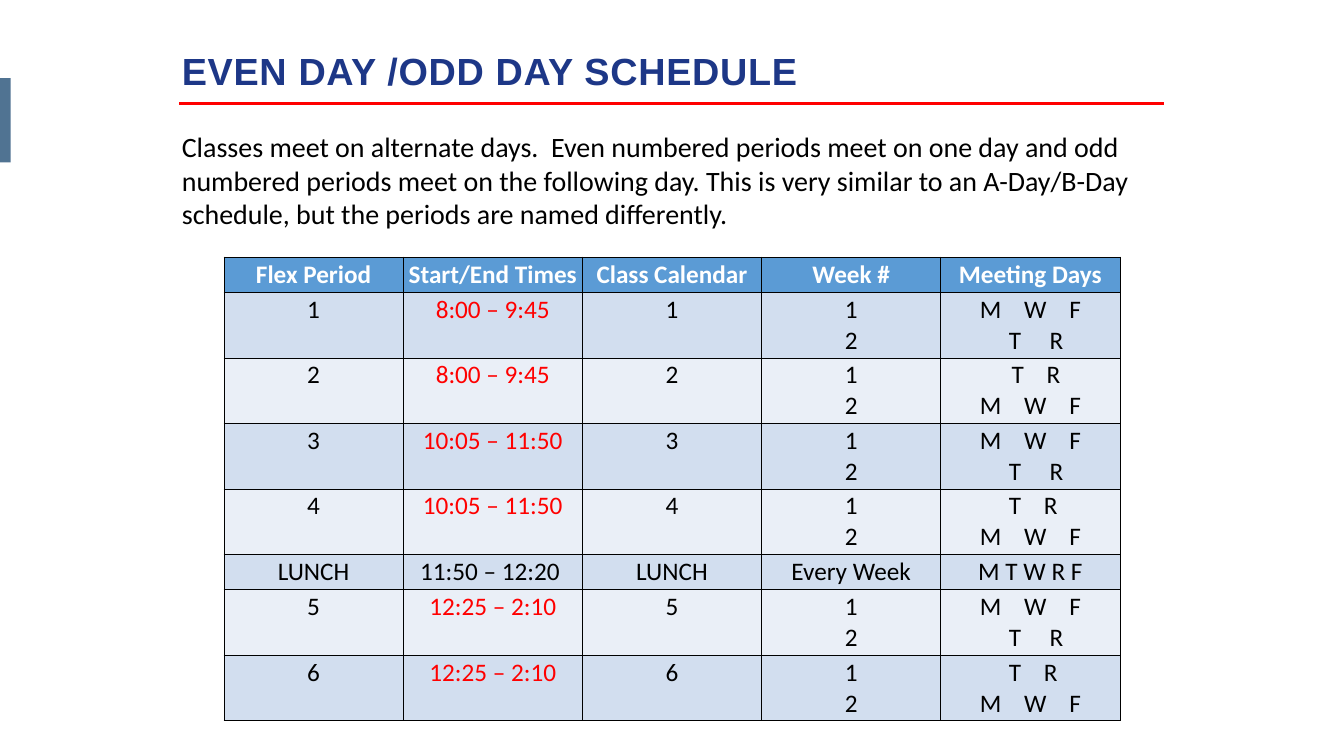
from lxml import etree
from pptx import Presentation
from pptx.dml.color import RGBColor
from pptx.enum.shapes import MSO_CONNECTOR, MSO_SHAPE
from pptx.enum.text import PP_ALIGN
from pptx.oxml.ns import qn
from pptx.util import Inches, Pt

STRAIGHT, RECTANGLE = MSO_CONNECTOR.STRAIGHT, MSO_SHAPE.RECTANGLE
CENTER, LEFT = PP_ALIGN.CENTER, PP_ALIGN.LEFT

COLORS = {
    "title": "1D3787", "rule": "FF0000", "tab": "507392", "text": "000000",
    "times": "FF0000", "header": "5B9BD5", "header_text": "FFFFFF",
    "odd_row": "D2DEEF", "even_row": "EAEFF7", "border": "000000",
}

TITLE = "EVEN DAY /ODD DAY SCHEDULE"
INTRO = (
    "Classes meet on alternate days.  Even numbered periods meet on one day "
    "and odd numbered periods meet on the following day. This is very similar "
    "to an A-Day/B-Day schedule, but the periods are named differently."
)
HEADERS = ["Flex Period", "Start/End Times", "Class Calendar", "Week #", "Meeting Days"]
WEEKS = "1\n2"
THREE_DAYS = "M    W    F"
ODD_DAYS = THREE_DAYS + "\n  T     R"
# Period (also its class calendar), times, weeks, meeting days
PERIODS = [
    ("1", "8:00 – 9:45", WEEKS, ODD_DAYS),
    ("2", "8:00 – 9:45", WEEKS, "  T    R\n" + THREE_DAYS),
    ("3", "10:05 – 11:50", WEEKS, ODD_DAYS),
    ("4", "10:05 – 11:50", WEEKS, " T    R\n" + THREE_DAYS),
    ("LUNCH", "11:50 – 12:20 ", "Every Week", "M T W R F"),
    ("5", "12:25 – 2:10", WEEKS, ODD_DAYS),
    ("6", "12:25 – 2:10", WEEKS, " T    R\n" + THREE_DAYS),
]

SLIDE_WIDTH, SLIDE_HEIGHT = 26.67, 15
TEXT_LEFT = 3.51
TABLE_TOP, COLUMN_WIDTH = 5.1, SLIDE_WIDTH * 2 / 15
TABLE_WIDTH = COLUMN_WIDTH * len(HEADERS)
ROW_HEIGHTS = {1: 0.7, 2: 1.3}  # by number of text lines
TIMES_COLUMN = 1


def rgb(name):
    return RGBColor.from_string(COLORS[name])


def write(frame, text, size, color, font="Calibri", bold=False, align=LEFT):
    frame.word_wrap = True
    frame.text = text
    for paragraph in frame.paragraphs:
        paragraph.alignment = align
        paragraph.font.name = font
        paragraph.font.size = Pt(size)
        paragraph.font.bold = bold
        paragraph.font.color.rgb = rgb(color)


def add_text(slide, top, width, height, text, size, color, **style):
    box = slide.shapes.add_textbox(
        Inches(TEXT_LEFT), Inches(top), Inches(width), Inches(height))
    write(box.text_frame, text, size, color, **style)
    return box.text_frame.paragraphs[0]


def add_borders(cell):
    properties = cell._tc.get_or_add_tcPr()
    for index, side in enumerate(("a:lnL", "a:lnR", "a:lnT", "a:lnB")):
        line = etree.Element(qn(side), w=str(Pt(1)))
        fill = etree.SubElement(line, qn("a:solidFill"))
        etree.SubElement(fill, qn("a:srgbClr"), val=COLORS["border"])
        properties.insert(index, line)


def add_schedule(slide):
    rows = [HEADERS] + [
        [period, times, period, weeks, days] for period, times, weeks, days in PERIODS]
    heights = [ROW_HEIGHTS[max(text.count("\n") + 1 for text in row)] for row in rows]
    table = slide.shapes.add_table(
        len(rows), len(HEADERS), Inches((SLIDE_WIDTH - TABLE_WIDTH) / 2),
        Inches(TABLE_TOP), Inches(TABLE_WIDTH), Inches(sum(heights))).table
    for column in table.columns:
        column.width = Inches(COLUMN_WIDTH)
    for r, row in enumerate(rows):
        table.rows[r].height = Inches(heights[r])
        fill = "header" if r == 0 else "odd_row" if r % 2 else "even_row"
        for c, text in enumerate(row):
            color = "text"
            if r == 0:
                color = "header_text"
            elif c == TIMES_COLUMN and row[0] != "LUNCH":
                color = "times"
            cell = table.cell(r, c)
            cell.margin_left = cell.margin_right = Inches(0.07)
            cell.margin_top = cell.margin_bottom = Inches(0.04)
            cell.fill.solid()
            cell.fill.fore_color.rgb = rgb(fill)
            write(cell.text_frame, text, 36, color, bold=r == 0, align=CENTER)
            add_borders(cell)


def main():
    presentation = Presentation()
    presentation.slide_width = Inches(SLIDE_WIDTH)
    presentation.slide_height = Inches(SLIDE_HEIGHT)
    slide = presentation.slides.add_slide(presentation.slide_layouts[6])

    rule = slide.shapes.add_connector(
        STRAIGHT, Inches(3.56), Inches(2.06), Inches(23.1), Inches(2.06))
    rule.line.color.rgb = rgb("rule")
    rule.line.width = Pt(4)
    etree.SubElement(rule._element.spPr, qn("a:effectLst"))

    intro = add_text(slide, 2.52, 19.79, 2.12, INTRO, 40, "text")
    intro.space_after = Pt(12)

    tab = slide.shapes.add_shape(RECTANGLE, 0, Inches(1.55), Inches(0.21), Inches(1.67))
    tab.shadow.inherit = False
    tab.fill.solid()
    tab.fill.fore_color.rgb = rgb("tab")
    tab.line.fill.background()

    title = add_text(slide, 0.89, 13.03, 1.01, TITLE, 54, "title", font="Arial", bold=True)
    title.runs[0].font._element.set("spc", "100")

    add_schedule(slide)
    presentation.save("out.pptx")


if __name__ == "__main__":
    main()
